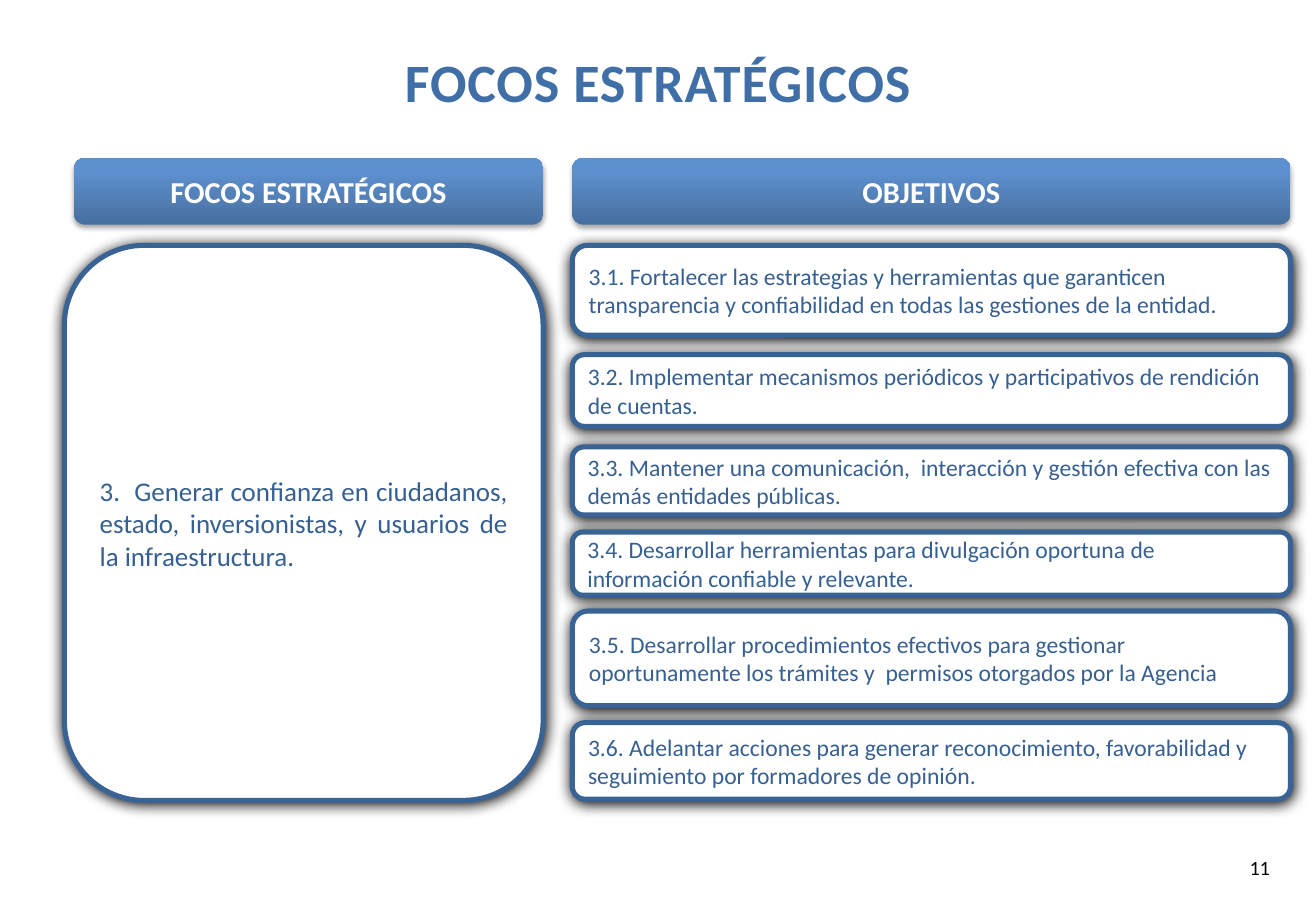
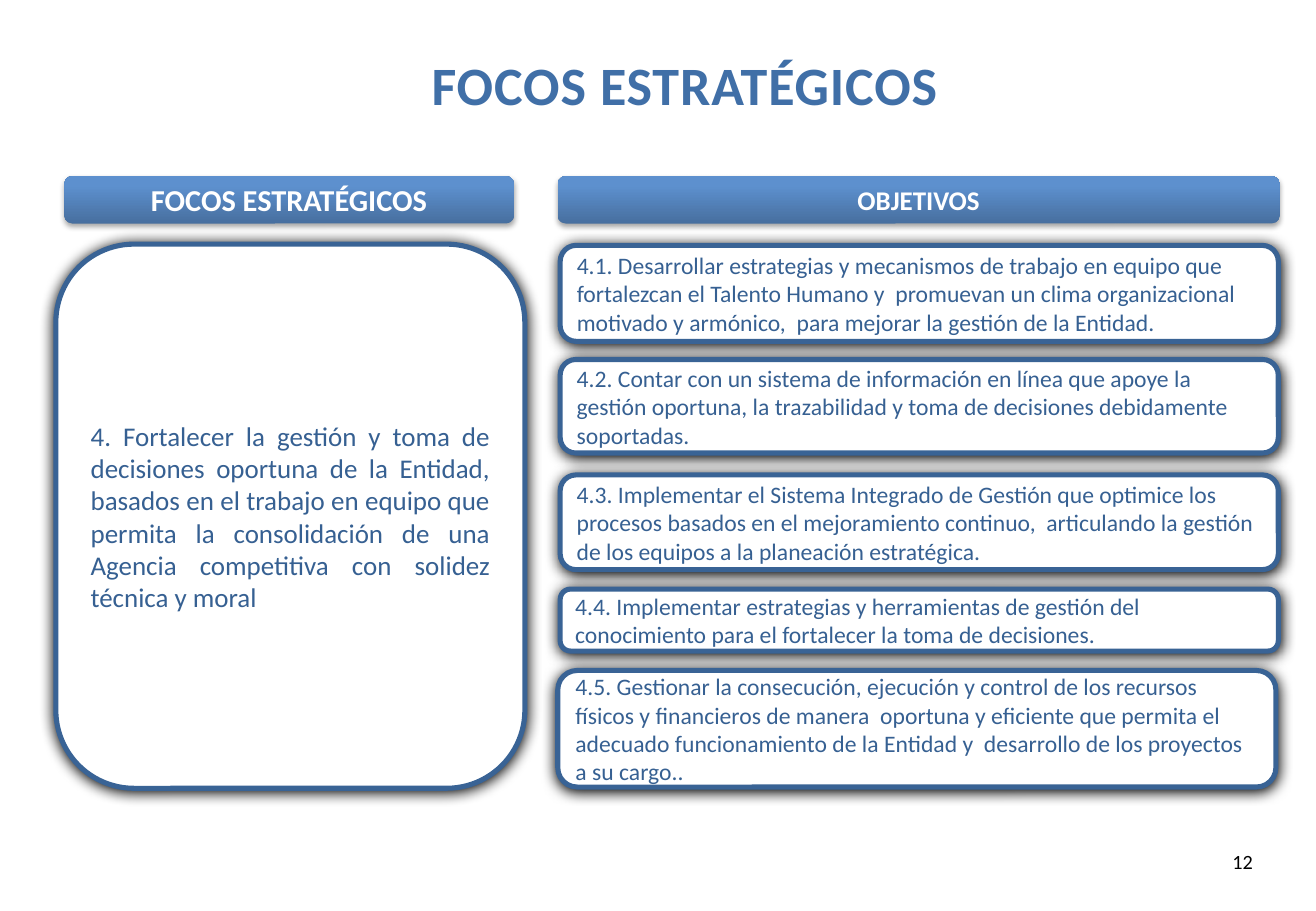
import copy

import pptx
import pptx.dml.color
import pptx.enum.dml
import pptx.enum.shapes
import pptx.enum.text
import pptx.oxml
import pptx.oxml.ns
import pptx.util

Inches = pptx.util.Inches
Pt = pptx.util.Pt
Align = pptx.enum.text.PP_ALIGN
Anchor = pptx.enum.text.MSO_ANCHOR

FONT = "Calibri"
TITLE_COLOR = "406FA7"
TEXT_COLOR = "366092"
BORDER_COLOR = "396395"
WHITE = "FFFFFF"
BLACK = "000000"
HEADER_STOPS = [(0, "476F9F"), (0.8, "5D90CE"), (1, "5B91D1")]
HEADING = "FOCOS ESTRATÉGICOS"

SLIDES = [
    {
        "number": ("11", (8.02, 6.94, 2.53, 0.4)),
        "title": (0, 0.35, 10.83, 0.64),
        "headers": [(HEADING, 18, (0.61, 1.3, 3.86, 0.55)),
                    ("OBJETIVOS", 18, (4.71, 1.3, 5.91, 0.55))],
        "focus": ("3.  Generar confianza en ciudadanos, estado, inversionistas, "
                  "y usuarios de la infraestructura.", (0.53, 2.02, 3.94, 4.57)),
        "objectives": [
            ("3.1. Fortalecer las estrategias y herramientas que garanticen "
             "transparencia y confiabilidad en todas las gestiones de la entidad.",
             (4.71, 2.02, 5.91, 0.74)),
            ("3.2. Implementar mecanismos periódicos y participativos de "
             "rendición de cuentas.", (4.71, 2.92, 5.91, 0.59)),
            ("3.3. Mantener una comunicación,  interacción y gestión efectiva "
             "con las demás entidades públicas.", (4.71, 3.68, 5.91, 0.56)),
            ("3.4. Desarrollar herramientas para divulgación oportuna de "
             "información confiable y relevante.", (4.71, 4.38, 5.91, 0.52)),
            ("3.5. Desarrollar procedimientos efectivos para gestionar "
             "oportunamente los trámites y  permisos otorgados por la Agencia",
             (4.71, 5.03, 5.91, 0.78)),
            ("3.6. Adelantar acciones para generar reconocimiento, "
             "favorabilidad y seguimiento por formadores de opinión.",
             (4.71, 5.95, 5.91, 0.63)),
        ],
    },
    {
        "number": ("12", (7.61, 6.89, 2.8, 0.4)),
        "title": (0.22, 0.37, 10.83, 0.64),
        "headers": [(HEADING, 18, (0.53, 1.45, 3.7, 0.39)),
                    ("OBJETIVOS", 16, (4.59, 1.45, 5.94, 0.39))],
        "focus": ("4. Fortalecer la gestión y toma de decisiones oportuna de la "
                  "Entidad, basados en el trabajo en equipo que permita la "
                  "consolidación de una Agencia competitiva con solidez técnica "
                  "y moral", (0.46, 2.01, 3.86, 4.48)),
        "objectives": [
            ("4.1. Desarrollar estrategias y mecanismos de trabajo en equipo que "
             "fortalezcan el Talento Humano y  promuevan un clima organizacional "
             "motivado y armónico,  para mejorar la gestión de la Entidad.",
             (4.61, 2.02, 5.91, 0.79)),
            ("4.2. Contar con un sistema de información en línea que apoye la "
             "gestión oportuna, la trazabilidad y toma de decisiones "
             "debidamente soportadas.", (4.61, 2.96, 5.91, 0.77)),
            ("4.3. Implementar el Sistema Integrado de Gestión que optimice los "
             "procesos basados en el mejoramiento continuo,  articulando la "
             "gestión de los equipos a la planeación estratégica.",
             (4.61, 3.91, 5.91, 0.78)),
            ("4.4. Implementar estrategias y herramientas de gestión del "
             "conocimiento para el fortalecer la toma de decisiones.",
             (4.61, 4.85, 5.91, 0.51)),
            ("4.5. Gestionar la consecución, ejecución y control de los recursos "
             "físicos y financieros de manera  oportuna y eficiente que permita "
             "el adecuado funcionamiento de la Entidad y  desarrollo de los "
             "proyectos a su cargo..", (4.59, 5.52, 5.91, 0.96)),
        ],
    },
]


def rgb(color):
    return pptx.dml.color.RGBColor.from_string(color)


def set_text(shape, text, size, color, align, bold=False, anchor=Anchor.MIDDLE):
    frame = shape.text_frame
    frame.word_wrap = True
    frame.vertical_anchor = anchor
    frame.text = text
    paragraph = frame.paragraphs[0]
    paragraph.alignment = align
    font = paragraph.font
    font.name = FONT
    font.size = Pt(size)
    font.bold = bold
    font.color.rgb = rgb(color)


def set_shadow(shape, opacity, blur, distance):
    """Replace the theme shadow by a black one that falls straight down."""
    shape.shadow.inherit = False
    effects = shape.element.spPr.find(pptx.oxml.ns.qn("a:effectLst"))
    effects.append(pptx.oxml.parse_xml(
        f'<a:outerShdw {pptx.oxml.ns.nsdecls("a")} blurRad="{Pt(blur)}" '
        f'dist="{Pt(distance)}" dir="5400000" algn="ctr" rotWithShape="0">'
        f'<a:srgbClr val="{BLACK}"><a:alpha val="{opacity * 1000}"/></a:srgbClr>'
        '</a:outerShdw>'))


def add_rounded_box(slide, box):
    return slide.shapes.add_shape(
        pptx.enum.shapes.MSO_SHAPE.ROUNDED_RECTANGLE, *map(Inches, box))


def add_header(slide, text, size, box):
    shape = add_rounded_box(slide, box)
    shape.fill.gradient()
    shape.fill.gradient_angle = 90
    stop_list = shape.element.spPr.find(".//" + pptx.oxml.ns.qn("a:gsLst"))
    stop_list.append(copy.deepcopy(stop_list[0]))
    for stop, (position, color) in zip(shape.fill.gradient_stops, HEADER_STOPS):
        stop.position = position
        stop.color.rgb = rgb(color)
    shape.line.fill.background()
    set_shadow(shape, 35, 3.1, 1.8)
    set_text(shape, text, size, WHITE, Align.CENTER, bold=True)


def add_card(slide, text, box, size, align):
    shape = add_rounded_box(slide, box)
    shape.fill.solid()
    shape.fill.fore_color.rgb = rgb(WHITE)
    shape.line.color.rgb = rgb(BORDER_COLOR)
    shape.line.width = Pt(3)
    set_shadow(shape, 100, 8.5, 1)
    set_text(shape, text, size, TEXT_COLOR, align)


def set_title(slide, box):
    title = slide.shapes.title
    title.left, title.top, title.width, title.height = map(Inches, box)
    set_text(title, HEADING, 32, TITLE_COLOR, Align.CENTER, bold=True,
             anchor=Anchor.TOP)
    run = title.text_frame.paragraphs[0].runs[0]
    run.font._element.set("spc", "50")


def add_slide_number(slide, text, box):
    number = slide.shapes.add_textbox(*map(Inches, box))
    set_text(number, text, 12, BLACK, Align.RIGHT)


def main():
    presentation = pptx.Presentation()
    presentation.slide_width = Inches(10.83)
    presentation.slide_height = Inches(7.5)
    title_only = presentation.slide_layouts[5]
    for content in SLIDES:
        slide = presentation.slides.add_slide(title_only)
        set_title(slide, content["title"])
        add_slide_number(slide, *content["number"])
        for header in content["headers"]:
            add_header(slide, *header)
        add_card(slide, *content["focus"], 16, Align.JUSTIFY)
        for objective in content["objectives"]:
            add_card(slide, *objective, 14, Align.LEFT)
    presentation.save("out.pptx")


if __name__ == "__main__":
    main()
